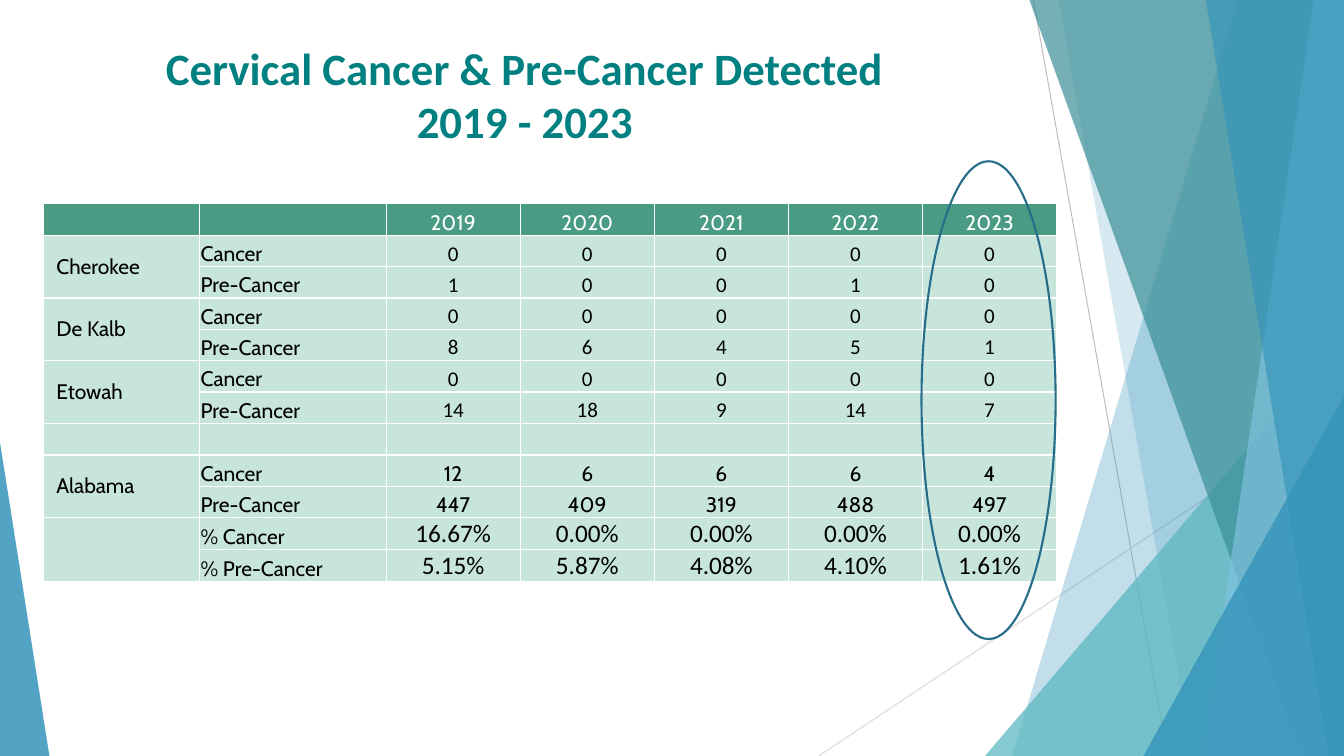
from lxml import etree
from pptx import Presentation
from pptx.dml.color import RGBColor
from pptx.enum.shapes import MSO_CONNECTOR, MSO_SHAPE
from pptx.enum.text import MSO_ANCHOR, PP_ALIGN
from pptx.oxml.ns import qn
from pptx.util import Inches, Pt

STRAIGHT = MSO_CONNECTOR.STRAIGHT
TRIANGLE, OVAL = MSO_SHAPE.ISOSCELES_TRIANGLE, MSO_SHAPE.OVAL
LEFT, CENTER = PP_ALIGN.LEFT, PP_ALIGN.CENTER
TOP, MIDDLE, BOTTOM = MSO_ANCHOR.TOP, MSO_ANCHOR.MIDDLE, MSO_ANCHOR.BOTTOM

WIDTH, HEIGHT = 13.33, 7.5
TEAL, BLUE = "008080", "3494BA"
HEADER_GREEN, BODY_GREEN = "4A9B83", "C8E5DC"
WHITE, BLACK = "FFFFFF", "000000"

YEARS = ["2019", "2020", "2021", "2022", "2023"]
# Place, measure, yearly values, font and size of the values
ROWS = [
    ("Cherokee", "Cancer", ["0", "0", "0", "0", "0"], "Calibri", 15),
    ("", "Pre-Cancer", ["1", "0", "0", "1", "0"], "Calibri", 15),
    ("De Kalb", "Cancer", ["0", "0", "0", "0", "0"], "Calibri", 15),
    ("", "Pre-Cancer", ["8", "6", "4", "5", "1"], "Calibri", 15),
    ("Etowah", "Cancer", ["0", "0", "0", "0", "0"], "Calibri", 15),
    ("", "Pre-Cancer", ["14", "18", "9", "14", "7"], "Calibri", 15),
    ("", "", [""] * 5, "Calibri", 15),
    ("Alabama", "Cancer", ["12", "6", "6", "6", "4"], "Cabin", 15),
    ("", "Pre-Cancer", ["447", "409", "319", "488", "497"], "Cabin", 15),
    ("", "% Cancer", ["16.67%", "0.00%", "0.00%", "0.00%", "0.00%"], "Calibri", 18),
    ("", "% Pre-Cancer", ["5.15%", "5.87%", "4.08%", "4.10%", "1.61%"], "Calibri", 18),
]
PLACE_ROWS = [1, 3, 5, 8, 10]  # first row of each two-row place cell

# Facets: top-left x, bottom-right x, bottom-left x of a band on the right edge
FACETS_BEHIND = [(12.28, 10.04, BLUE, 30), (10.5, 11.83, BLUE, 20)]
FACETS_FRONT = [(10.21, 12.91, "3A8F98", 70), (13.03, 11.92, "7FC1DB", 70),
                (11.96, 13.18, BLUE, 65)]


def rgb(hex_colour):
    return RGBColor.from_string(hex_colour)


def fill_shape(shape, colour, opacity):
    shape.shadow.inherit = False
    shape.line.fill.background()
    shape.fill.solid()
    shape.fill.fore_color.rgb = rgb(colour)
    colour_xml = shape.fill._xPr.find(qn("a:solidFill"))[0]
    etree.SubElement(colour_xml, qn("a:alpha"), val=str(opacity * 1000))


def add_thin_line(slide, start, end, colour):
    line = slide.shapes.add_connector(STRAIGHT, *map(Inches, start + end))
    line.line.color.rgb = rgb(colour)
    line.line.width = Pt(0.75)
    etree.SubElement(line._element.spPr, qn("a:effectLst"))


def add_facet(slide, top_x, bottom_x, colour, opacity):
    corners = [(WIDTH, 0), (WIDTH, HEIGHT), (bottom_x, HEIGHT)]
    outline = slide.shapes.build_freeform(Inches(top_x), 0)
    outline.add_line_segments([(Inches(x), Inches(y)) for x, y in corners])
    fill_shape(outline.convert_to_shape(), colour, opacity)


def add_corner(slide, left, top, width, apex, colour, opacity):
    corner = slide.shapes.add_shape(TRIANGLE, Inches(left), Inches(top),
                                    Inches(width), Inches(HEIGHT - top))
    corner.adjustments[0] = apex
    fill_shape(corner, colour, opacity)


def add_run(paragraph, text, font, size, colour, bold=False):
    run = paragraph.add_run()
    run.text = text
    run.font.name = font
    run.font.size = Pt(size)
    run.font.bold = bold
    run.font.color.rgb = rgb(colour)


def set_title(slide, lines):
    title = slide.shapes.title
    title.left, title.top = Inches(0.13), Inches(0.35)
    title.width, title.height = Inches(10.15), Inches(1.14)
    title.text_frame.vertical_anchor = TOP
    paragraph = title.text_frame.paragraphs[0]
    paragraph.alignment = CENTER
    for number, line in enumerate(lines):
        if number:
            paragraph.add_line_break()
        add_run(paragraph, line, "Calibri", 32, TEAL, True)
    slide.shapes._spTree.append(title._element)  # in front of the facets


def border_cell(cell):
    properties = cell._tc.get_or_add_tcPr()
    for position, side in enumerate(("a:lnL", "a:lnR", "a:lnT", "a:lnB")):
        border = etree.Element(qn(side), w=str(Pt(1)))
        solid = etree.SubElement(border, qn("a:solidFill"))
        etree.SubElement(solid, qn("a:srgbClr"), val=WHITE)
        properties.insert(position, border)


def format_cell(cell, text, fill, colour=BLACK, font="Cabin", size=15,
                align=LEFT, anchor=BOTTOM, side=0.01, top=0.01, bottom=0):
    cell.fill.solid()
    cell.fill.fore_color.rgb = rgb(fill)
    cell.margin_left = cell.margin_right = Inches(side)
    cell.margin_top, cell.margin_bottom = Inches(top), Inches(bottom)
    cell.vertical_anchor = anchor
    border_cell(cell)
    paragraph = cell.text_frame.paragraphs[0]
    paragraph.alignment = align
    if text:
        add_run(paragraph, text, font, size, colour)


def add_results_table(slide):
    row_count, column_count = len(ROWS) + 1, len(YEARS) + 2
    table = slide.shapes.add_table(row_count, column_count, Inches(0.43), Inches(2.02),
                                   Inches(10.04), Inches(3.73)).table
    for column, width in zip(table.columns, [1.55, 1.85] + [1.33] * len(YEARS)):
        column.width = Inches(width)
    # Header row
    for column, year in enumerate(["", ""] + YEARS):
        format_cell(table.cell(0, column), year, HEADER_GREEN, WHITE, align=CENTER)
    # Body rows
    for row, (place, measure, values, font, size) in enumerate(ROWS, 1):
        if place:
            format_cell(table.cell(row, 0), place, BODY_GREEN, anchor=MIDDLE,
                        side=0.13, top=0.06, bottom=0.06)
        else:
            format_cell(table.cell(row, 0), "", BODY_GREEN)
        format_cell(table.cell(row, 1), measure, BODY_GREEN)
        for column, value in enumerate(values, 2):
            format_cell(table.cell(row, column), value, BODY_GREEN,
                        font=font, size=size, align=CENTER)
    for row in PLACE_ROWS:
        table.cell(row, 0).merge(table.cell(row + 1, 0))


def add_highlight(slide):
    ring = slide.shapes.add_shape(OVAL, Inches(9.14), Inches(1.6),
                                  Inches(1.33), Inches(4.74))
    ring.shadow.inherit = False
    ring.fill.background()
    ring.line.color.rgb = rgb("266D8A")
    ring.line.width = Pt(1.5)


def main():
    deck = Presentation()
    deck.slide_width, deck.slide_height = Inches(WIDTH), Inches(HEIGHT)
    slide = deck.slides.add_slide(deck.slide_layouts[5])

    # Decorative facets
    add_thin_line(slide, (10.25, 0), (11.58, HEIGHT), "BFBFBF")
    add_thin_line(slide, (WIDTH, 4.03), (8.12, HEIGHT), "D9D9D9")
    for facet in FACETS_BEHIND:
        add_facet(slide, *facet)
    add_corner(slide, 9.77, 3.33, 3.56, 1, "58B6C0", 72)
    for facet in FACETS_FRONT:
        add_facet(slide, *facet)
    add_corner(slide, 11.34, 3.93, 1.99, 1, BLUE, 80)
    add_corner(slide, 0, 4.39, 0.49, 0, BLUE, 85)

    # Title, results and the latest year's ring
    set_title(slide, ["Cervical Cancer & Pre-Cancer Detected", "2019 - 2023"])
    add_results_table(slide)
    add_highlight(slide)
    deck.save("out.pptx")


if __name__ == "__main__":
    main()
